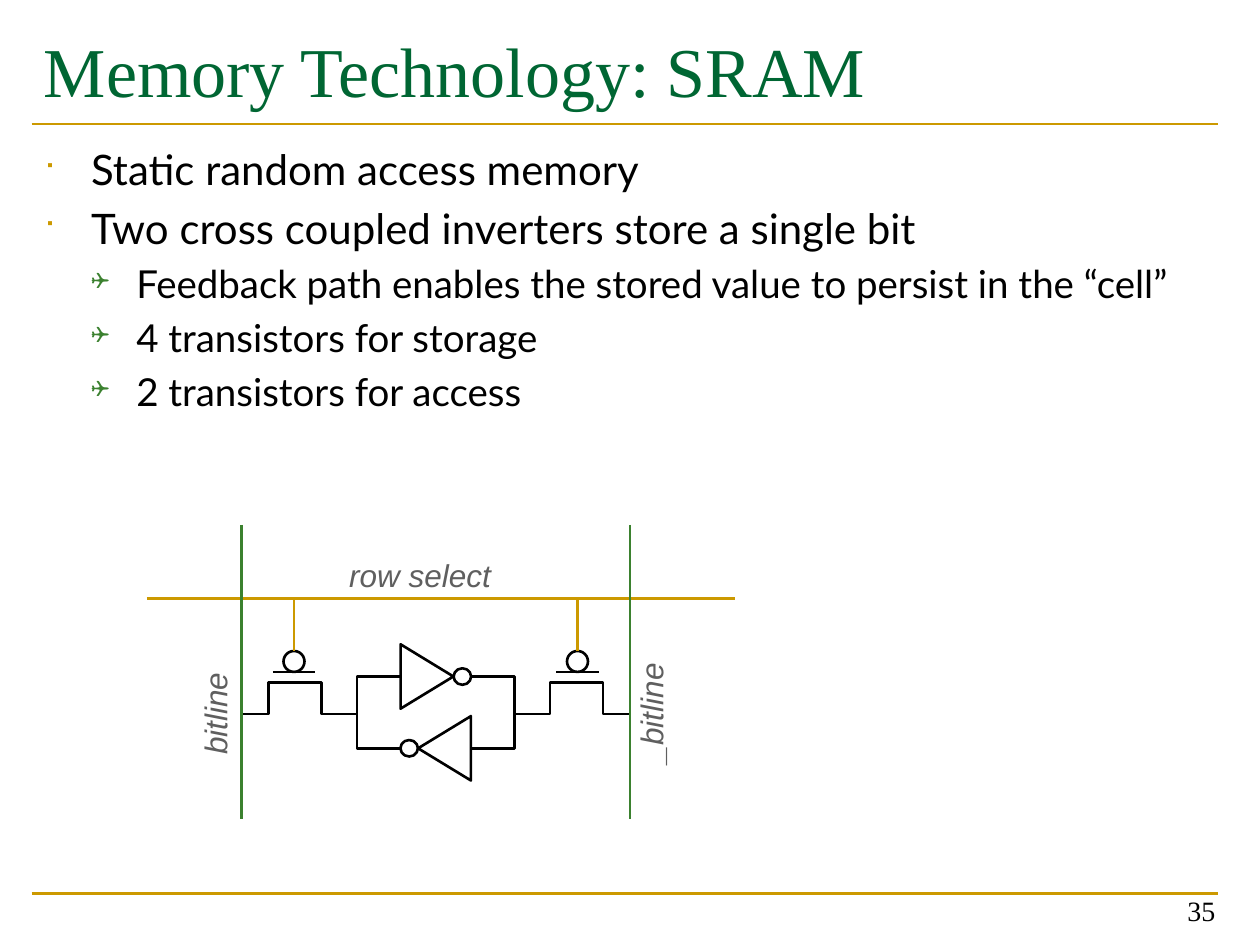
from lxml import etree
from pptx import Presentation
from pptx.dml.color import RGBColor
from pptx.enum import shapes, text
from pptx.oxml import ns
from pptx.util import Pt

COLORS = {
    "gold": "CC9900",
    "green": "3B812F",
    "title": "006633",
    "black": "000000",
    "label": "5F5F5F",
}
LINE_WIDTH = 1.5
RULE_LEFT, RULE_RIGHT = 18, 696

# Text, level
BULLETS = [
    ("Static random access memory", 0),
    ("Two cross coupled inverters store a single bit", 0),
    ("Feedback path enables the stored value to persist in the “cell”", 1),
    ("4 transistors for storage", 1),
    ("2 transistors for access", 1),
]
# Per level: font size, left margin, hanging indent, bullet, colour, bullet size in %
LEVELS = [
    (24, 27, 27, "■", "gold", 65),
    (22, 52.8, 25.8, "❑", "green", 60),
]

# Cell geometry: the right half mirrors the left half
BITLINE_X, BITLINE_MIRROR_X = 138, 360
ROW_Y = 342
GATE_X, GATE_TOP, GATE_SIZE = 168, 372, 12
NODE_X, NODE_Y = 204, 408
INVERTER_YS = (386.6, 427.6)


def mirror(x, mirrored=True):
    return BITLINE_X + BITLINE_MIRROR_X - x if mirrored else x


def rgb(name):
    return RGBColor.from_string(COLORS[name])


def style_outline(shape):
    shape.shadow.inherit = False
    shape.fill.background()
    shape.line.color.rgb = rgb("black")
    shape.line.width = Pt(LINE_WIDTH)


def add_line(container, x1, y1, x2, y2, color="black"):
    line = container.add_connector(
        shapes.MSO_CONNECTOR.STRAIGHT, Pt(x1), Pt(y1), Pt(x2), Pt(y2))
    line.line.color.rgb = rgb(color)
    line.line.width = Pt(LINE_WIDTH)
    etree.SubElement(line._element.spPr, ns.qn("a:effectLst"))


def add_outline(container, kind, center_x, center_y, width, height, rotation=0):
    shape = container.add_shape(
        kind, Pt(center_x - width / 2), Pt(center_y - height / 2), Pt(width), Pt(height))
    shape.rotation = rotation
    style_outline(shape)


def add_wire(container, points):
    start, *rest = [(Pt(x), Pt(y)) for x, y in points]
    builder = container.build_freeform(*start)
    builder.add_line_segments(rest, close=False)
    style_outline(builder.convert_to_shape())


def format_runs(paragraph, size, font, color):
    for run in paragraph.runs:
        run.font.size = Pt(size)
        run.font.name = font
        run.font.color.rgb = rgb(color)


def add_text(container, left, top, width, height, content, size, font, color):
    box = container.add_textbox(Pt(left), Pt(top), Pt(width), Pt(height))
    box.text_frame.word_wrap = True
    box.text_frame.text = content
    format_runs(box.text_frame.paragraphs[0], size, font, color)
    return box


def add_label(container, content, center_x, center_y, width, rotation=0):
    height = 26.6
    box = add_text(container, center_x - width / 2, center_y - height / 2,
                   width, height, content, 18, "Arial", "label")
    box.rotation = rotation
    frame = box.text_frame
    frame.word_wrap = False
    frame.auto_size = text.MSO_AUTO_SIZE.NONE
    # Narrow side margins keep each label on one line
    frame.margin_left = frame.margin_right = Pt(3)
    paragraph = frame.paragraphs[0]
    paragraph.alignment = text.PP_ALIGN.CENTER
    paragraph.line_spacing = 0.9
    paragraph.runs[0].font.italic = True


def set_bullet(paragraph, margin, hanging, character, color, percent):
    properties = paragraph._p.get_or_add_pPr()
    properties.set("marL", str(Pt(margin)))
    properties.set("indent", str(-Pt(hanging)))
    bullet_color = etree.SubElement(properties, ns.qn("a:buClr"))
    etree.SubElement(bullet_color, ns.qn("a:srgbClr"), val=COLORS[color])
    etree.SubElement(properties, ns.qn("a:buSzPct"), val=str(percent * 1000))
    etree.SubElement(properties, ns.qn("a:buFont"), typeface="Wingdings")
    etree.SubElement(properties, ns.qn("a:buChar"), char=character)


def add_bullets(container):
    box = container.add_textbox(Pt(RULE_LEFT), Pt(78.5), Pt(678), Pt(409))
    frame = box.text_frame
    frame.word_wrap = True
    frame.text = "\n".join(content for content, _ in BULLETS)
    for paragraph, (_, level) in zip(frame.paragraphs, BULLETS):
        size, *bullet = LEVELS[level]
        paragraph.level = level
        paragraph.space_before = Pt(size * 0.2)
        set_bullet(paragraph, *bullet)
        format_runs(paragraph, size, "Lato", "black")


def add_access_transistor(container, mirrored):
    gate_x = mirror(GATE_X, mirrored)
    plate_y = GATE_TOP + GATE_SIZE
    channel = [(BITLINE_X, NODE_Y), (153.4, NODE_Y), (153.4, 390),
               (183.6, 390), (183.6, NODE_Y), (NODE_X, NODE_Y)]
    add_wire(container, [(mirror(x, mirrored), y) for x, y in channel])
    add_line(container, gate_x - 12, plate_y, gate_x + 12, plate_y)
    add_outline(container, shapes.MSO_SHAPE.OVAL, gate_x,
                GATE_TOP + GATE_SIZE / 2, GATE_SIZE, GATE_SIZE)
    add_line(container, gate_x, ROW_Y, gate_x, GATE_TOP, "gold")


def add_inverter(container, center_y, mirrored):
    add_outline(container, shapes.MSO_SHAPE.ISOSCELES_TRIANGLE,
                mirror(244, mirrored), center_y, 36.8, 30.2, 270 if mirrored else 90)
    add_outline(container, shapes.MSO_SHAPE.OVAL,
                mirror(264.2, mirrored), center_y, 10, 9.4)


def add_memory_cell(container):
    # Cross-coupled inverters and their feedback wires
    upper, lower = INVERTER_YS
    add_inverter(container, upper, False)
    add_inverter(container, lower, True)
    loop = [(228.7, upper), (NODE_X, upper), (NODE_X, lower), (228.7, lower)]
    for mirrored in (False, True):
        add_wire(container, [(mirror(x, mirrored), y) for x, y in loop])

    # Row select, access transistors and bitlines
    add_line(container, 84, ROW_Y, 420, ROW_Y, "gold")
    for mirrored in (False, True):
        add_access_transistor(container, mirrored)
        x = mirror(BITLINE_X, mirrored)
        add_line(container, x, 300, x, 468, "green")

    # Labels
    add_label(container, "row select", 240, 330, 96)
    add_label(container, "bitline", 124.2, 407.8, 61, 270)
    add_label(container, "_bitline", 373.3, 407.5, 71, 270)


def main():
    presentation = Presentation()
    presentation.slide_width, presentation.slide_height = Pt(720), Pt(540)
    slide = presentation.slides.add_slide(presentation.slide_layouts[6])

    # Rules under the title and above the page number
    for y in (510.5, 70.8):
        add_line(slide.shapes, RULE_LEFT, y, RULE_RIGHT, y, "gold")

    # Title and body
    add_bullets(slide.shapes)
    add_text(slide.shapes, RULE_LEFT, 12.2, 678, 84,
             "Memory Technology: SRAM", 40, "Times New Roman", "title")

    # Page number
    number = add_text(slide.shapes, 533.5, 497.5, 168, 36,
                      "35", 16, "Times New Roman", "black")
    number.text_frame.vertical_anchor = text.MSO_ANCHOR.BOTTOM
    number.text_frame.paragraphs[0].alignment = text.PP_ALIGN.RIGHT

    # SRAM cell diagram
    add_memory_cell(slide.shapes.add_group_shape().shapes)
    presentation.save("out.pptx")


if __name__ == "__main__":
    main()
